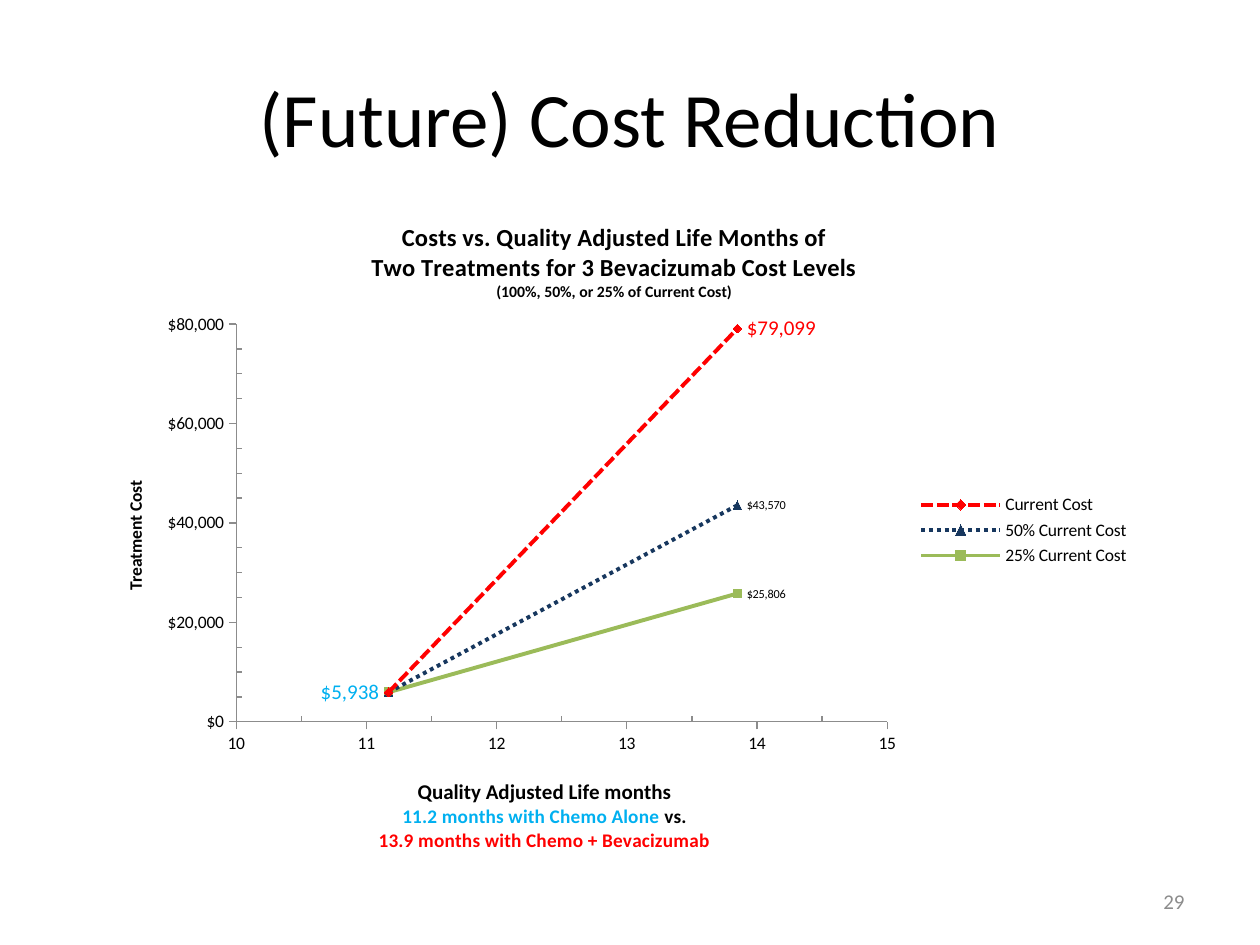
from pptx import Presentation
from pptx.chart.data import XyChartData
from pptx.dml.color import RGBColor
from pptx.enum.chart import XL_CHART_TYPE as CT, XL_LABEL_POSITION as POS
from pptx.enum.chart import XL_LEGEND_POSITION as LEGEND, XL_MARKER_STYLE as MARK, XL_TICK_MARK as TICK
from pptx.enum.dml import MSO_LINE as DASH
from pptx.enum.text import MSO_ANCHOR as ANCHOR, PP_ALIGN as ALIGN
from pptx.oxml import parse_xml
from pptx.oxml.ns import nsdecls
from pptx.util import Pt

BLACK = RGBColor(0, 0, 0)
RED = RGBColor(0xFF, 0, 0)
NAVY = RGBColor(0x17, 0x37, 0x5E)
GREEN = RGBColor(0x9B, 0xBB, 0x59)
BLUE = RGBColor(0, 0xB0, 0xF0)
GRAY = RGBColor(0x8C, 0x8C, 0x8C)
FONT = "Calibri"
MONEY = '"$"#,##0'

MONTHS = (11.17, 13.85)
SERIES = [
    ("Current Cost", (5938, 79099), RED, DASH.SQUARE_DOT, MARK.DIAMOND,
     [(0, POS.LEFT, 12, BLUE), (1, POS.RIGHT, 12, RED)]),
    ("50% Current Cost", (5938, 43570), NAVY, DASH.ROUND_DOT, MARK.TRIANGLE,
     [(1, POS.RIGHT, 7, BLACK)]),
    ("25% Current Cost", (5938, 25806), GREEN, DASH.SOLID, MARK.SQUARE,
     [(1, POS.RIGHT, 7, BLACK)]),
]
CHART_TITLE = [
    [("Costs vs. Quality Adjusted Life Months of", 14, BLACK)],
    [("Two Treatments for 3 Bevacizumab Cost Levels", 14, BLACK)],
    [("(100%, 50%, or 25% of Current Cost)", 9, BLACK)],
]
X_TITLE = [
    [("Quality Adjusted Life months", 12, BLACK)],
    [("11.2 months with Chemo Alone", 11, BLUE), (" vs.", 11, BLACK)],
    [("13.9 months with Chemo + Bevacizumab", 11, RED)],
]
Y_TITLE = [[("Treatment Cost", 10, BLACK)]]


def set_font(font, size, color=BLACK, bold=False):
    font.name, font.size, font.bold = FONT, Pt(size), bold
    font.color.rgb = color


def add_text(p, text, size=12, color=BLACK, bold=False, align=ALIGN.CENTER):
    p.alignment = align
    r = p.add_run()
    r.text = text
    set_font(r.font, size, color, bold)


def add_lines(tf, lines):
    for i, line in enumerate(lines):
        p = tf.add_paragraph() if i else tf.paragraphs[0]
        for text, size, color in line:
            add_text(p, text, size=size, color=color, bold=True)


def place(el, after=None, inner=False, **box):
    for old in el.xpath("c:layout"):
        el.remove(old)
    target = '<c:layoutTarget val="inner"/>' if inner else ""
    modes = '<c:xMode val="edge"/><c:yMode val="edge"/>'
    sizes = "".join(f'<c:{k} val="{v}"/>' for k, v in box.items())
    layout = parse_xml(f'<c:layout {nsdecls("c")}><c:manualLayout>{target}{modes}{sizes}'
                       '</c:manualLayout></c:layout>')
    if after:
        el.xpath(after)[0].addnext(layout)
    else:
        el.insert(0, layout)


def format_axis(axis, low, high, major, minor, fmt, title):
    axis.minimum_scale, axis.maximum_scale = low, high
    axis.major_unit, axis.minor_unit = major, minor
    axis.has_major_gridlines = False
    axis.major_tick_mark, axis.minor_tick_mark = TICK.OUTSIDE, TICK.INSIDE
    axis.tick_labels.number_format = fmt
    axis.tick_labels.number_format_is_linked = False
    set_font(axis.tick_labels.font, 10)
    axis.format.line.color.rgb = GRAY
    axis.format.line.width = Pt(0.75)
    add_lines(axis.axis_title.text_frame, title)


def format_series(ser, color, dash, mark, labels):
    ser.format.line.color.rgb = color
    ser.format.line.width = Pt(2.25)
    ser.format.line.dash_style = dash
    ser.marker.style, ser.marker.size = mark, 5
    ser.marker.format.fill.solid()
    ser.marker.format.fill.fore_color.rgb = color
    ser.marker.format.line.color.rgb = color
    for i, pos, size, label_color in labels:
        label = ser.points[i].data_label
        set_font(label.font, size, label_color)
        label.position = pos


prs = Presentation()
prs.slide_width, prs.slide_height = Pt(720), Pt(540)
s = prs.slides.add_slide(prs.slide_layouts[5])

title = s.shapes.title
title.left, title.top, title.width, title.height = Pt(36), Pt(21.6), Pt(648), Pt(90)
title.text_frame.vertical_anchor = ANCHOR.MIDDLE
add_text(title.text_frame.paragraphs[0], "(Future) Cost Reduction", size=44)

data = XyChartData(number_format=MONEY)
for name, costs, *_ in SERIES:
    points = data.add_series(name)
    for month, cost in zip(MONTHS, costs):
        points.add_data_point(month, cost)
chart = s.shapes.add_chart(CT.XY_SCATTER_LINES, Pt(54), Pt(108), Pt(600), Pt(390), data).chart
set_font(chart.font, 10)
chart.plots[0].vary_by_categories = False
for ser, (_, _, *style) in zip(chart.plots[0].series, SERIES):
    format_series(ser, *style)

root = chart.element
for show in root.xpath(".//c:ser/c:dLbls/c:showVal"):
    show.set("val", "0")
for props in root.xpath(".//c:dLbl/c:txPr"):
    num = parse_xml(f'<c:numFmt {nsdecls("c")} sourceLinked="0"/>')
    num.set("formatCode", MONEY)
    spot = props.getparent().xpath("c:spPr") or [props]
    spot[0].addprevious(num)

chart.has_title = True
add_lines(chart.chart_title.text_frame, CHART_TITLE)
x_axis, y_axis = chart.category_axis, chart.value_axis
format_axis(x_axis, 10, 15, 1, 0.5, "General", X_TITLE)
format_axis(y_axis, 0, 80000, 20000, 5000, MONEY, Y_TITLE)
for body in root.xpath(".//c:valAx[2]/c:title//a:bodyPr"):
    body.set("rot", "-5400000")
    body.set("vert", "horz")

chart.has_legend = True
chart.legend.position = LEGEND.RIGHT
chart.legend.include_in_layout = False
set_font(chart.legend.font, 10)

place(root.xpath(".//c:plotArea")[0], inner=True, x=0.135, y=0.198, w=0.62, h=0.583)
place(root.xpath("c:chart/c:title")[0], after="c:tx", x=0.26, y=0.04)
place(root.xpath(".//c:valAx[1]/c:title")[0], after="c:tx", x=0.267, y=0.857)
place(root.xpath(".//c:valAx[2]/c:title")[0], after="c:tx", x=0.025, y=0.423)
place(root.xpath(".//c:legend")[0], after="c:legendPos", x=0.78, y=0.44, w=0.21, h=0.12)

number = s.shapes.add_textbox(Pt(516), Pt(500.5), Pt(168), Pt(28.8))
number.text_frame.word_wrap = True
number.text_frame.vertical_anchor = ANCHOR.MIDDLE
add_text(number.text_frame.paragraphs[0], "29", color=GRAY, align=ALIGN.RIGHT)

prs.save("out.pptx")
